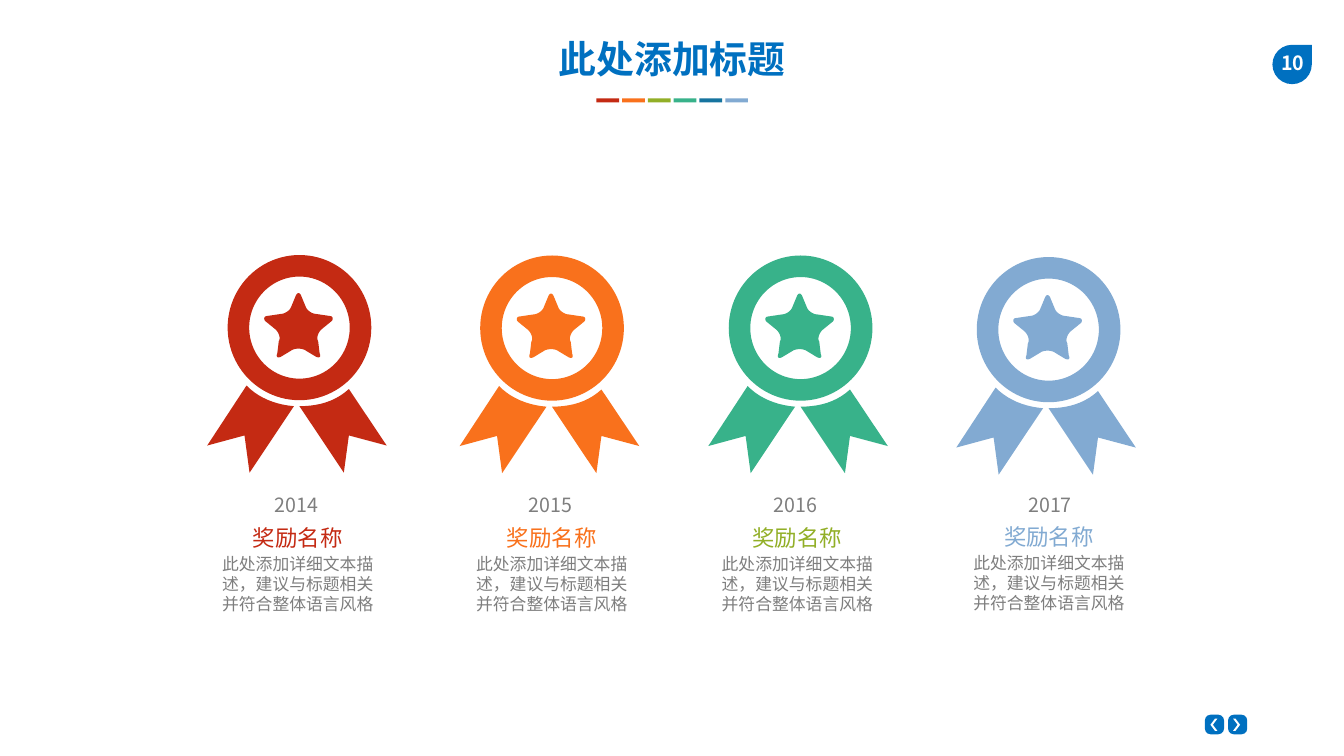
"""Build the awards timeline slide with four medal rosettes."""
import math

import lxml.etree
import pptx
import pptx.dml.color
import pptx.enum.shapes
import pptx.enum.text
import pptx.oxml.ns
import pptx.util

Pt = pptx.util.Pt
PRESET = pptx.enum.shapes.MSO_SHAPE
ALIGN = pptx.enum.text.PP_ALIGN
ANCHOR = pptx.enum.text.MSO_ANCHOR
FONT = "Noto Sans CJK SC"
BLUE, GREY, WHITE = "0070C0", "7E7E7E", "FFFFFF"


def paint(shape, color):
    """Give a shape a plain fill without line or shadow."""
    shape.shadow.inherit = False
    shape.fill.solid()
    shape.fill.fore_color.rgb = pptx.dml.color.RGBColor.from_string(color)
    shape.line.fill.background()


def write(paragraph, text, color, size, bold=False, **layout):
    """Fill a centred paragraph with one formatted run."""
    for name, value in {"alignment": ALIGN.CENTER, "space_before": Pt(0), **layout}.items():
        setattr(paragraph, name, value)
    run = paragraph.add_run()
    run.text = text
    for name, value in {"name": FONT, "size": Pt(size), "bold": bold}.items():
        setattr(run.font, name, value)
    run.font.color.rgb = pptx.dml.color.RGBColor.from_string(color)
    east_asian = lxml.etree.SubElement(run.font._element, pptx.oxml.ns.qn("a:ea"))
    east_asian.set("typeface", FONT)


deck = pptx.Presentation()
deck.slide_width, deck.slide_height = Pt(1919.5), Pt(1080)
slide = deck.slides.add_slide(deck.slide_layouts[5])
shapes = slide.shapes

title = shapes.title
title_format = {"left": Pt(719.3), "top": Pt(46.8), "width": Pt(481), "height": Pt(72.7)}
for name, value in title_format.items():
    setattr(title, name, value)
title_frame = {"word_wrap": True, "vertical_anchor": ANCHOR.MIDDLE, "margin_top": 0, "margin_bottom": 0}
for name, value in title_frame.items():
    setattr(title.text_frame, name, value)
write(title.text_frame.paragraphs[0], "此处添加标题", BLUE, 54, True)

for index, color in enumerate(["C42A13", "F9711C", "92AF27", "38B28A", "16749F", "82AAD2"]):
    dash = shapes.add_shape(PRESET.RECTANGLE, Pt(851.8 + 36.8 * index), Pt(140.4), Pt(32.4), Pt(5.8))
    paint(dash, color)

badge = shapes.add_shape(PRESET.TEAR, Pt(1817.3), Pt(64), Pt(56.2), Pt(56.2))
paint(badge, BLUE)
page_number = shapes.add_textbox(Pt(1811.5), Pt(64.8), Pt(69.8), Pt(48.2)).text_frame
number_frame = {"word_wrap": False, "margin_left": Pt(14.4), "margin_right": Pt(14.4),
                "margin_top": Pt(7.2), "margin_bottom": Pt(7.2)}
for name, value in number_frame.items():
    setattr(page_number, name, value)
write(page_number.paragraphs[0], "10", WHITE, 28, True, line_spacing=Pt(35))

for button_left, arrow_left, turn in [(1720.8, 1728.7, 180), (1753.9, 1761.1, 0)]:
    button = shapes.add_shape(PRESET.ROUNDED_RECTANGLE, Pt(button_left), Pt(1021), Pt(27.4), Pt(28))
    button.adjustments[0] = 0.3
    paint(button, BLUE)
    arrow = shapes.add_shape(PRESET.CHEVRON, Pt(arrow_left), Pt(1026.7), Pt(10), Pt(17.3))
    arrow.adjustments[0] = 0.65
    arrow.rotation = turn
    paint(arrow, WHITE)

star_top = [(-3.6, 57.6), (-1.4, 53.3), (1.4, 53.3), (3.6, 57.6)]
star_side = [
    [(10.8, 74.9), (13, 79.9), (20.2, 84.2), (25.2, 84.2)],
    [(44.6, 87.1), (49.7, 87.1), (49.7, 92.2), (47.5, 94.3)],
    [(32.4, 106.6), (28.1, 110.9), (25.2, 118.8), (28.1, 123.1)],
    [(30.2, 140.4), (32.4, 145.4), (30.2, 147.6), (25.2, 145.4)],
]
star_bottom = [(8.6, 135.4), (3.6, 133.2), (-3.6, 133.2), (-8.6, 135.4)]
star_mirror = [[(-x, y) for x, y in reversed(corner)] for corner in reversed(star_side)]
star = [[(x - 1.4, y) for x, y in corner]
        for corner in [star_top, *star_side, star_bottom, *star_mirror]]
left_ribbon = [[(-75.6, 186.5), (-59, 203.8), (-34.6, 213.8), (-7.9, 216)],
               [(-71.3, 311)], [(-78.5, 257.8)], [(-131.8, 272.2)]]
right_ribbon = [[(0, 216), (26.6, 216), (51.1, 209.5), (70.6, 191.5)],
                [(124.6, 272.2)], [(70.6, 257.8)], [(63.4, 311)]]

STEPS = 10
medal_outlines = []
for corners in [left_ribbon, right_ribbon, star]:
    outline = []
    for controls in corners:
        degree = len(controls) - 1
        for step in range(STEPS + 1 if degree else 1):
            t = step / STEPS
            weights = [math.comb(degree, k) * t**k * (1 - t) ** (degree - k) for k in range(degree + 1)]
            outline.append(tuple(sum(w * point[axis] for w, point in zip(weights, controls))
                                 for axis in (0, 1)))
    medal_outlines.append(outline)

awards = [
    ("2014", "C42A13", "C42A13", 427.7, 364.3, 423.4, 425.2, 736.6),
    ("2015", "F9711C", "F9711C", 788.4, 365, 786.2, 788, 736.6),
    ("2016", "38B28A", "92AF27", 1143.4, 365, 1136.2, 1138.7, 736.6),
    ("2017", "82AAD2", "82AAD2", 1497.6, 367.2, 1499.8, 1498, 735.1),
]
for year, medal_color, name_color, medal_x, medal_top, year_x, caption_x, caption_top in awards:
    ring = shapes.add_shape(PRESET.DONUT, Pt(medal_x - 102.6), Pt(medal_top), Pt(205.2), Pt(207.4))
    ring.adjustments[0] = 0.15
    paint(ring, medal_color)
    for outline in medal_outlines:
        points = [(Pt(medal_x + x), Pt(medal_top + y)) for x, y in outline]
        builder = shapes.build_freeform(*points[0])
        builder.add_line_segments(points[1:], close=True)
        paint(builder.convert_to_shape(), medal_color)

    year_text = shapes.add_textbox(Pt(year_x - 158.4), Pt(702), Pt(316.8), Pt(41)).text_frame
    year_text.word_wrap = True
    year_text.vertical_anchor = ANCHOR.MIDDLE
    write(year_text.paragraphs[0], year, GREY, 28, line_spacing=0.9)

    caption = shapes.add_textbox(Pt(caption_x - 135), Pt(caption_top), Pt(270), Pt(159.8)).text_frame
    caption_frame = {"word_wrap": True, "margin_left": Pt(19.4), "margin_right": Pt(19.4),
                     "margin_top": Pt(9.4), "margin_bottom": Pt(9.4)}
    for name, value in caption_frame.items():
        setattr(caption, name, value)
    write(caption.paragraphs[0], "奖励名称", name_color, 32, line_spacing=Pt(41))
    write(caption.add_paragraph(), "此处添加详细文本描述，建议与标题相关并符合整体语言风格",
          GREY, 24, line_spacing=Pt(28.6), space_before=Pt(4.8))

deck.save("out.pptx")
